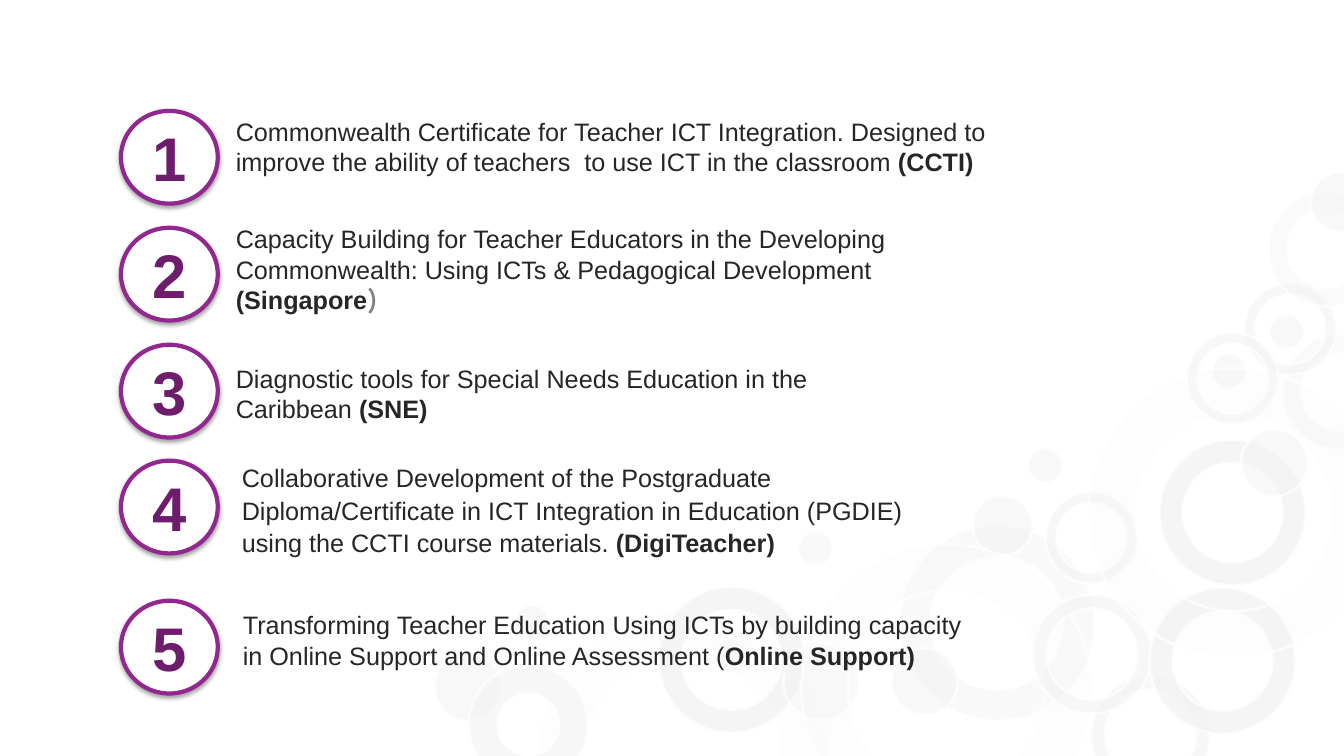
import dataclasses
from typing import Any

import pptx
import pptx.dml.color
import pptx.enum.shapes
import pptx.enum.text
import pptx.oxml
import pptx.oxml.ns
import pptx.util

PX = 9144  # 100 px to the inch
SHAPE = pptx.enum.shapes.MSO_SHAPE
TEXT, NUMBER, PAREN, RING, BUBBLE, WHITE = (
    "262626", "6D1D6B", "808080", "92278F", "F2F2F2", "FFFFFF")


@dataclasses.dataclass(frozen=True)
class BubbleStyle:
    size: int
    opacity: int
    rim: float = 0  # 0 draws a solid disc


@dataclasses.dataclass(frozen=True)
class BubbleCluster:
    rotation: float
    bubbles: list[tuple[str, int, int]]  # style, left, top


@dataclasses.dataclass(frozen=True)
class Course:
    circle_top: int
    left: int
    top: int
    width: int
    height: int
    description: str
    short_name: str
    ending: str = ""
    spacing: dict[str, Any] = dataclasses.field(default_factory=dict)


STYLES = {
    "huge": BubbleStyle(287, 13, 0.159),
    "large": BubbleStyle(194, 42, 0.159),
    "bold": BubbleStyle(145, 75, 0.159),
    "faint": BubbleStyle(114, 31, 0.159),
    "thin": BubbleStyle(118, 54, 0.117),
    "thick": BubbleStyle(118, 54, 0.24),
    "small": BubbleStyle(91, 54, 0.117),
    "pale disc": BubbleStyle(75, 39),
    "big disc": BubbleStyle(66, 47),
    "disc": BubbleStyle(59, 47),
    "dot": BubbleStyle(34, 47),
}

CLUSTERS = [
    BubbleCluster(101.7, [
        ("bold", 1150, 436), ("faint", 1272, 332), ("huge", 534, 607),
        ("thin", 1082, 670), ("small", 1234, 281), ("big disc", 1231, 426),
        ("dot", 1202, 351)]),
    BubbleCluster(341.7, [
        ("large", 892, 521), ("bold", 653, 582), ("pale disc", 777, 639),
        ("disc", 965, 492), ("huge", 795, 540), ("thin", 1024, 590),
        ("small", 1037, 488), ("dot", 792, 527), ("big disc", 431, 649),
        ("dot", 709, 633), ("dot", 1020, 445)]),
    BubbleCluster(176.7, [
        ("bold", 1140, 583), ("faint", 1258, 190), ("disc", 1300, 171),
        ("huge", 1080, 365), ("small", 1177, 330), ("thick", 465, 660),
        ("dot", 1259, 312), ("big disc", 884, 643), ("dot", 510, 600)]),
]

COURSES = [
    Course(110, 224, 110, 767, 71,
           "Commonwealth Certificate for Teacher ICT Integration. Designed to improve "
           "the ability of teachers  to use ICT in the classroom ", "(CCTI)"),
    Course(226, 224, 217, 667, 101,
           "Capacity Building for Teacher Educators in the Developing Commonwealth: "
           "Using ICTs & Pedagogical Development ", "(Singapore", ")"),
    Course(342, 224, 355, 667, 71,
           "Diagnostic tools for Special Needs Education in the Caribbean ", "(SNE)"),
    Course(457, 230, 452, 679, 107,
           "Collaborative Development of the Postgraduate Diploma/Certificate in ICT "
           "Integration in Education (PGDIE) using the CCTI course materials. ",
           "(DigiTeacher)",
           spacing={"line_spacing": 1.07, "space_before": pptx.util.Pt(2)}),
    Course(596, 231, 600, 738, 71,
           "Transforming Teacher Education Using ICTs by building capacity in Online "
           "Support and Online Assessment (", "Online Support)"),
]


def box(*lengths: int) -> list[int]:
    return [length * PX for length in lengths]


def set_all(target: Any, values: dict[str, Any]) -> None:
    for name, value in values.items():
        setattr(target, name, value)


def paint(colour_format: Any, colour: str, opacity: int = 100) -> None:
    """Colour a fill or a line's fill, with opacity in percent."""
    colour_format.solid()
    colour_format.fore_color.rgb = pptx.dml.color.RGBColor.from_string(colour)
    if opacity < 100:
        ns = pptx.oxml.ns
        rgb = colour_format._xPr.find(".//" + ns.qn("a:srgbClr"))
        rgb.append(pptx.oxml.parse_xml(
            f'<a:alpha {ns.nsdecls("a")} val="{opacity * 1000}"/>'))


def add_run(p: Any, text: str, colour: str, size: int = 18,
            bold: bool = False, font: str = "Arial") -> None:
    r = p.add_run()
    r.text = text
    set_all(r.font, {"name": font, "size": pptx.util.Pt(size), "bold": bold})
    paint(r.font.fill, colour)


def add_bubble(shapes: Any, style: BubbleStyle, left: int, top: int,
               rotation: float) -> None:
    kind = SHAPE.DONUT if style.rim else SHAPE.OVAL
    sp = shapes.add_shape(kind, *box(left, top, style.size, style.size))
    if style.rim:
        sp.adjustments[0] = style.rim
    sp.rotation = rotation
    sp.shadow.inherit = False
    paint(sp.fill, BUBBLE, style.opacity)
    paint(sp.line.fill, WHITE, 70)
    sp.line.width = pptx.util.Pt(2)


def add_soft_shadow(sp: Any) -> None:
    sp.shadow.inherit = False
    ns = pptx.oxml.ns
    effects = sp._element.spPr.find(ns.qn("a:effectLst"))
    effects.append(pptx.oxml.parse_xml(
        f'<a:outerShdw {ns.nsdecls("a")} blurRad="39400" dist="22900" dir="5400000" '
        'rotWithShape="0"><a:srgbClr val="000000"><a:alpha val="35000"/></a:srgbClr>'
        '</a:outerShdw>'))


def add_number(shapes: Any, number: int, top: int) -> None:
    sp = shapes.add_shape(SHAPE.OVAL, *box(120, top, 96, 92))
    add_soft_shadow(sp)
    paint(sp.fill, WHITE)
    paint(sp.line.fill, RING)
    sp.line.width = pptx.util.Pt(3)
    sp.text_frame.vertical_anchor = pptx.enum.text.MSO_ANCHOR.MIDDLE
    p = sp.text_frame.paragraphs[0]
    p.alignment = pptx.enum.text.PP_ALIGN.CENTER
    add_run(p, str(number), NUMBER, size=44, bold=True)


def add_description(shapes: Any, course: Course) -> None:
    sp = shapes.add_textbox(*box(course.left, course.top, course.width, course.height))
    set_all(sp.text_frame, {
        "word_wrap": True,
        "auto_size": pptx.enum.text.MSO_AUTO_SIZE.SHAPE_TO_FIT_TEXT})
    p = sp.text_frame.paragraphs[0]
    set_all(p, course.spacing)
    add_run(p, course.description, TEXT)
    add_run(p, course.short_name, TEXT, bold=True)
    if course.ending:
        add_run(p, course.ending, PAREN, bold=True, font="Manrope")


def main() -> None:
    prs = pptx.Presentation()
    prs.slide_width, prs.slide_height = box(1333, 750)
    s = prs.slides.add_slide(prs.slide_layouts[6])
    paint(s.background.fill, WHITE)
    for cluster in CLUSTERS:
        group = s.shapes.add_group_shape()
        for style, left, top in cluster.bubbles:
            add_bubble(group.shapes, STYLES[style], left, top, cluster.rotation)
    for number, course in enumerate(COURSES, start=1):
        add_number(s.shapes, number, course.circle_top)
        add_description(s.shapes, course)
    prs.save("out.pptx")


if __name__ == "__main__":
    main()
